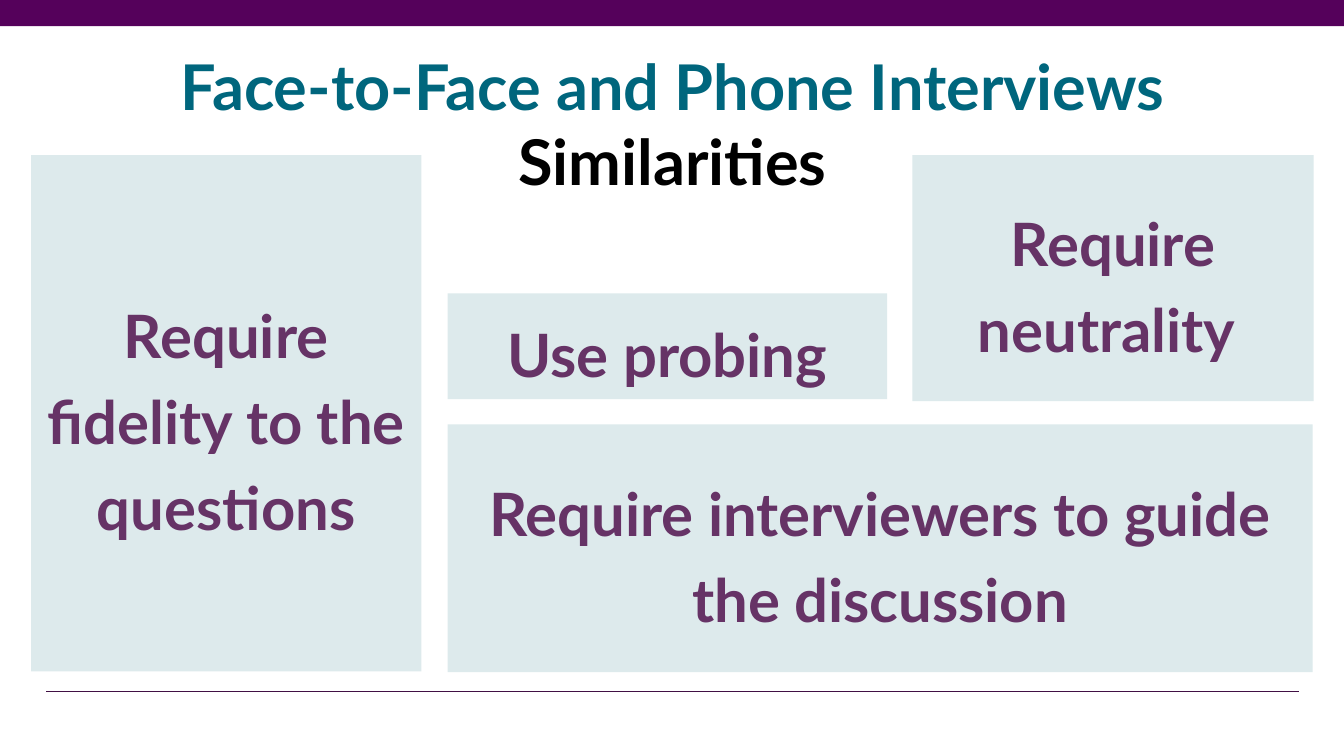
"""Build the slide on similarities of face-to-face and phone interviews."""
from dataclasses import dataclass

from lxml.etree import SubElement
from pptx import Presentation
from pptx.dml.color import RGBColor
from pptx.enum.shapes import MSO_CONNECTOR, MSO_SHAPE
from pptx.enum.text import MSO_ANCHOR, PP_ALIGN
from pptx.oxml.ns import qn
from pptx.shapes.autoshape import Shape
from pptx.slide import Slide
from pptx.text.text import _Paragraph
from pptx.util import Inches, Pt


@dataclass(frozen=True)
class Theme:
    """Colours and type sizes of the slide."""
    font: str = "Lato"
    band: str = "55015B"
    rule: str = "411044"
    card: str = "DDEAEC"
    card_text: str = "663366"
    heading: str = "00667D"
    subheading: str = "000000"
    heading_size: float = 45
    card_size: float = 42.7
    rule_width: float = 1.25


@dataclass(frozen=True)
class Similarity:
    """A statement and its card's place in inches."""
    text: str
    left: float
    top: float
    width: float
    height: float


THEME = Theme()
SLIDE_WIDTH, SLIDE_HEIGHT = 13.33, 7.5
SIMILARITIES = [
    Similarity("Require fidelity to the questions", 0.31, 1.54, 3.87, 5.12),
    Similarity("Use probing", 4.44, 2.91, 4.36, 1.05),
    Similarity("Require neutrality ", 9.05, 1.54, 3.98, 2.44),
    Similarity("Require interviewers to guide the discussion", 4.44, 4.21, 8.58, 2.46),
]
HEADINGS = [
    ("Face-to-Face and Phone Interviews", THEME.heading),
    ("Similarities", THEME.subheading),
]


def style_paragraph(paragraph: _Paragraph, size: float, color: str) -> None:
    """Centre a paragraph and set its bold type."""
    paragraph.alignment = PP_ALIGN.CENTER
    for run in paragraph.runs:
        run.font.name = THEME.font
        run.font.size = Pt(size)
        run.font.bold = True
        run.font.color.rgb = RGBColor.from_string(color)


def add_block(slide: Slide, left: float, top: float, width: float,
              height: float, fill: str) -> Shape:
    """Add a plain filled rectangle."""
    block = slide.shapes.add_shape(
        MSO_SHAPE.RECTANGLE, Inches(left), Inches(top), Inches(width), Inches(height))
    block.shadow.inherit = False
    block.fill.solid()
    block.fill.fore_color.rgb = RGBColor.from_string(fill)
    block.line.fill.background()
    return block


def add_similarity(slide: Slide, similarity: Similarity) -> None:
    """Add a card with its statement."""
    card = add_block(slide, similarity.left, similarity.top,
                     similarity.width, similarity.height, THEME.card)
    frame = card.text_frame
    frame.word_wrap = True
    frame.vertical_anchor = MSO_ANCHOR.MIDDLE
    frame.text = similarity.text
    statement = frame.paragraphs[0]
    statement.line_spacing = 1.2
    style_paragraph(statement, THEME.card_size, THEME.card_text)


def add_footer_rule(slide: Slide) -> None:
    """Add the thin line below the cards."""
    rule = slide.shapes.add_connector(
        MSO_CONNECTOR.STRAIGHT, Inches(12.88), Inches(6.86), Inches(0.46), Inches(6.86))
    rule.line.color.rgb = RGBColor.from_string(THEME.rule)
    rule.line.width = Pt(THEME.rule_width)
    SubElement(rule._element.spPr, qn("a:effectLst"))


def add_headings(slide: Slide) -> None:
    """Add the two-line title."""
    title = slide.shapes.add_textbox(Inches(0.25), Inches(0.42), Inches(12.84), Inches(1.59))
    frame = title.text_frame
    frame.word_wrap = True
    frame.text = "\n".join(text for text, _ in HEADINGS)
    for paragraph, (_, color) in zip(frame.paragraphs, HEADINGS):
        style_paragraph(paragraph, THEME.heading_size, color)


def main() -> None:
    """Build and save the presentation."""
    presentation = Presentation()
    presentation.slide_width = Inches(SLIDE_WIDTH)
    presentation.slide_height = Inches(SLIDE_HEIGHT)
    slide = presentation.slides.add_slide(presentation.slide_layouts[6])
    add_footer_rule(slide)
    add_block(slide, 0, 0, SLIDE_WIDTH, 0.26, THEME.band)
    for similarity in SIMILARITIES:
        add_similarity(slide, similarity)
    add_headings(slide)
    presentation.save("out.pptx")


if __name__ == "__main__":
    main()
